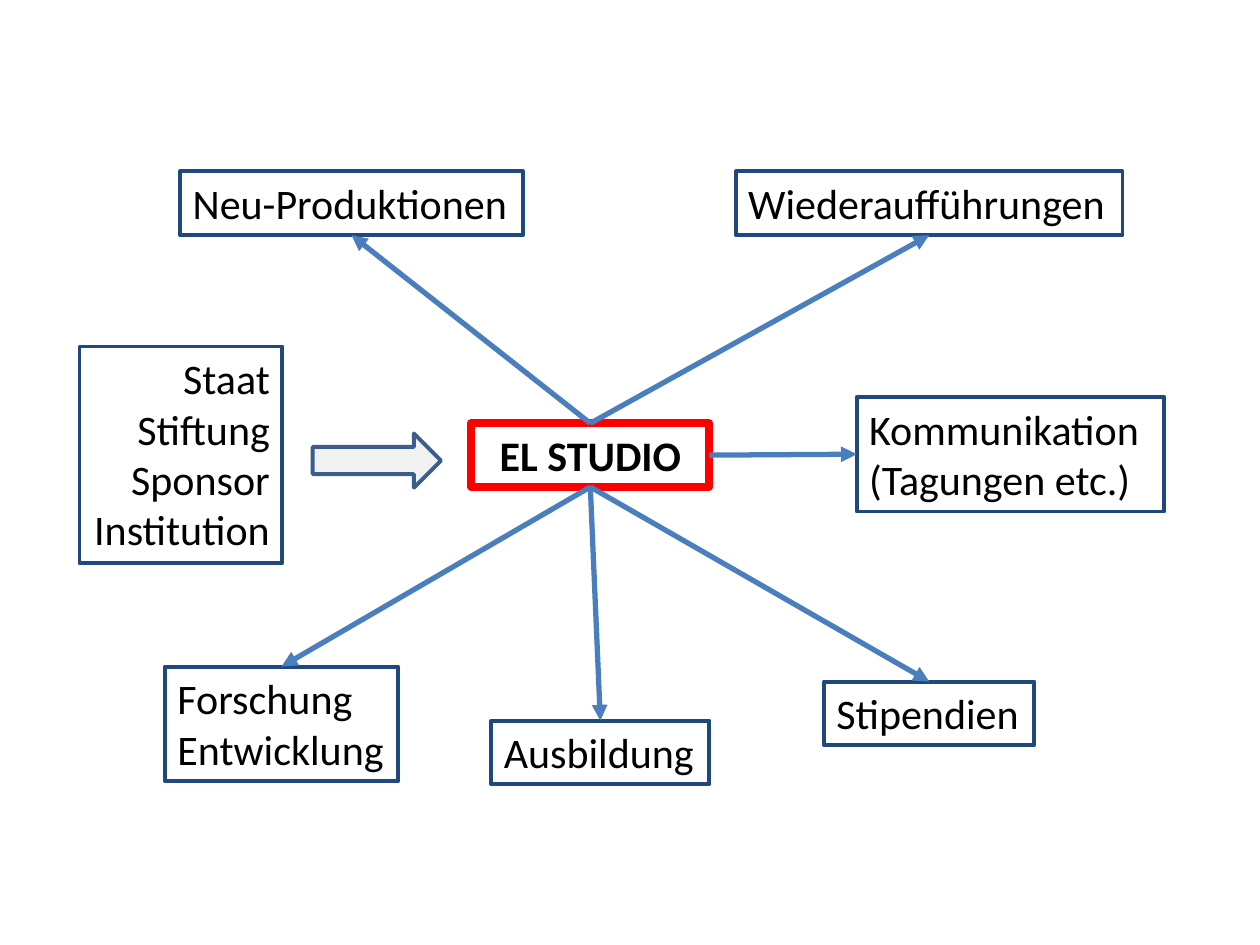
import pptx
import pptx.util
import pptx.dml.color
import pptx.enum.shapes
import pptx.enum.text
import lxml.etree
from pptx.oxml.ns import qn

Pt = pptx.util.Pt
ALIGN = pptx.enum.text.PP_ALIGN
COLOURS = {
    "text": "000000",
    "frame": "1F497D",
    "studio": "FF0000",
    "connector": "4B7EBC",
    "arrow_fill": "F2F2F2",
    "arrow_line": "3A5F8C",
}
TOP, BOTTOM, RIGHT, LEFT = 0, 2, 3, 1  # connection sites of a rectangle


def colour(name):
    return pptx.dml.color.RGBColor.from_string(COLOURS[name])


def add_label(lines, left, top, width, height, align=ALIGN.LEFT,
              frame="frame", weight=2.25, bold=False):
    box = page.shapes.add_textbox(Pt(left), Pt(top), Pt(width), Pt(height))
    box.line.color.rgb = colour(frame)
    box.line.width = Pt(weight)
    text = box.text_frame
    text.word_wrap = bold
    text.auto_size = pptx.enum.text.MSO_AUTO_SIZE.SHAPE_TO_FIT_TEXT
    for index, line in enumerate(lines):
        para = text.add_paragraph() if index else text.paragraphs[0]
        para.alignment = align
        span = para.add_run()
        span.text = line
        span.font.name = "Calibri"
        span.font.size = Pt(24)
        span.font.bold = bold
        span.font.color.rgb = colour("text")
    return box


deck = pptx.Presentation()
deck.slide_width, deck.slide_height = Pt(720), Pt(540)
page = deck.slide_layouts[6]
page = deck.slides.add_slide(page)

# Studio in the centre
studio = add_label(["EL STUDIO"], 269.3, 241.9, 136.1, 36.4, ALIGN.CENTER,
                   "studio", 4.5, True)

# Sponsors on the left
add_label(["Staat", "Stiftung", "Sponsor", "Institution"],
          45.4, 198, 115.9, 123.8, ALIGN.RIGHT)

# Fields of work: lines, left, top, width, height, studio side, field side
fields = [
    (["Neu-Produktionen"], 103, 98, 195.8, 36.4, TOP, BOTTOM),
    (["Wiederaufführungen"], 420.5, 98, 221, 36.4, TOP, BOTTOM),
    (["Kommunikation", "(Tagungen etc.)"], 489.6, 226.8, 175.7, 65.5, RIGHT, LEFT),
    (["Stipendien"], 470.9, 389.5, 120.2, 36.4, BOTTOM, TOP),
    (["Ausbildung"], 280.8, 411.8, 124.6, 36.4, BOTTOM, TOP),
    (["Forschung", "Entwicklung"], 94.3, 380.9, 133.2, 65.5, BOTTOM, TOP),
]
boxes = [add_label(*field[:5]) for field in fields]

# Block arrow from the sponsors to the studio
arrow = page.shapes.add_shape(pptx.enum.shapes.MSO_SHAPE.RIGHT_ARROW,
                              Pt(178.6), Pt(247.7), Pt(73.4), Pt(31))
arrow.shadow.inherit = False
arrow.fill.solid()
arrow.fill.fore_color.rgb = colour("arrow_fill")
arrow.line.color.rgb = colour("arrow_line")
arrow.line.width = Pt(2.25)

# Connectors from the studio to each field
for box, field in zip(boxes, fields):
    link = page.shapes.add_connector(pptx.enum.shapes.MSO_CONNECTOR.STRAIGHT, 0, 0, 0, 0)
    link.begin_connect(studio, field[5])
    link.end_connect(box, field[6])
    link.line.color.rgb = colour("connector")
    link.line.width = Pt(3)
    lxml.etree.SubElement(link.line._get_or_add_ln(), qn("a:tailEnd"), type="triangle")
    lxml.etree.SubElement(link._element.spPr, qn("a:effectLst"))

deck.save("out.pptx")
